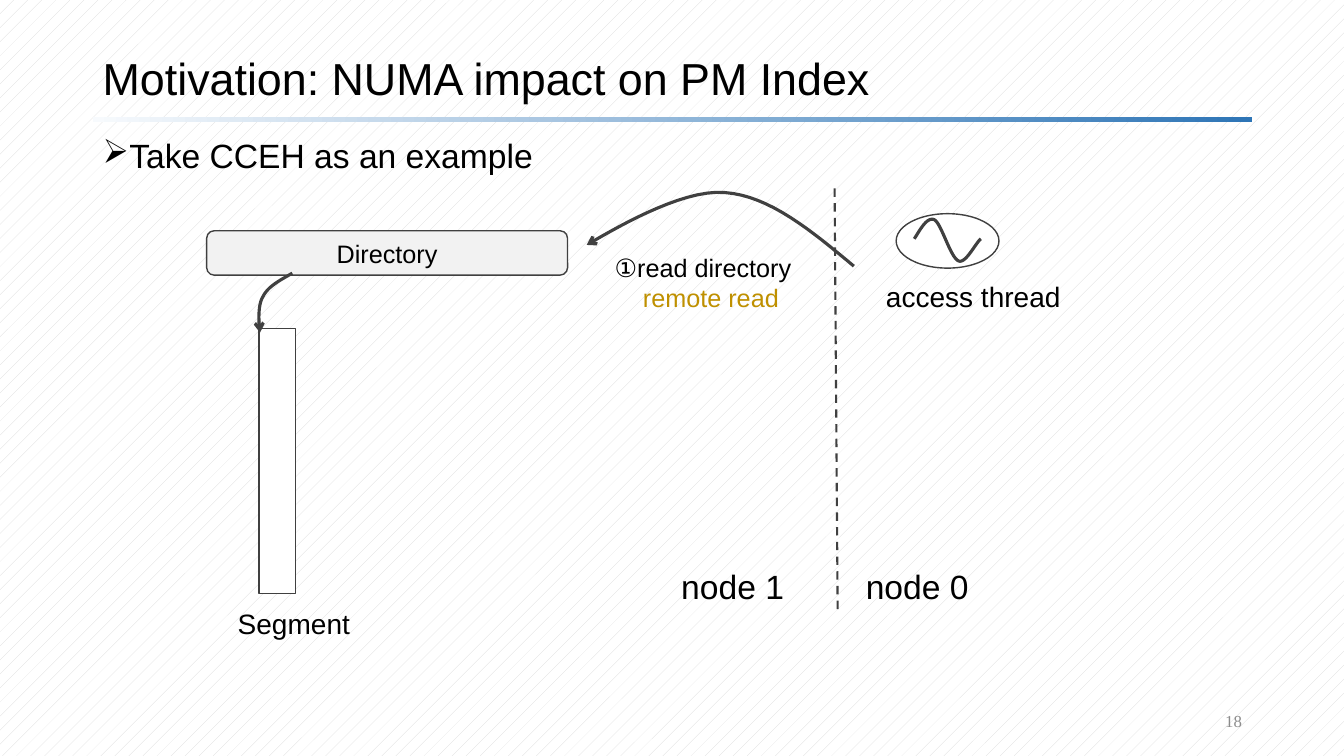
from lxml import etree
from pptx import Presentation
from pptx.dml.color import RGBColor
from pptx.enum.dml import MSO_LINE, MSO_PATTERN
from pptx.enum.shapes import MSO_CONNECTOR, MSO_SHAPE
from pptx.enum.text import MSO_ANCHOR, PP_ALIGN
from pptx.oxml.ns import qn
from pptx.util import Inches, Pt

RECT, ROUND, OVAL = MSO_SHAPE.RECTANGLE, MSO_SHAPE.ROUNDED_RECTANGLE, MSO_SHAPE.OVAL
LEFT, MID, RIGHT = PP_ALIGN.LEFT, PP_ALIGN.CENTER, PP_ALIGN.RIGHT
TOP, CENTER = MSO_ANCHOR.TOP, MSO_ANCHOR.MIDDLE
STRAIGHT, DASH, DOTS = MSO_CONNECTOR.STRAIGHT, MSO_LINE.DASH, MSO_PATTERN.PERCENT_5

BLACK = RGBColor(0x00, 0x00, 0x00)
WHITE = RGBColor(0xFF, 0xFF, 0xFF)
INK = RGBColor(0x40, 0x40, 0x40)
PALE = RGBColor(0xF2, 0xF2, 0xF2)
GRAIN = RGBColor(0xD9, 0xD9, 0xD9)
GRAY = RGBColor(0x8C, 0x8C, 0x8C)
GOLD = RGBColor(0xBF, 0x90, 0x00)
ICE = RGBColor(0xF7, 0xFA, 0xFD)
BLUE = RGBColor(0x2E, 0x75, 0xB6)

WIDE, HIGH = Inches(13.33), Inches(7.5)
STEPS = 16  # points drawn along each curve piece


def place(*shares):
    """Turn percent shares (x, y, x, y ...) of the slide into lengths."""
    return [round((HIGH if i % 2 else WIDE) * s / 100) for i, s in enumerate(shares)]


def write(para, text, size, color=BLACK, align=LEFT, face="Arial"):
    para.text = text
    para.alignment = align
    para.font.size = Pt(size)
    para.font.name = face
    para.font.color.rgb = color


def indent(para, left, first=0):
    props = para._p.get_or_add_pPr()
    props.set("marL", str(Inches(left)))
    props.set("indent", str(Inches(first)))
    return props


def label(slide, box, text, size, wrap=False, anchor=TOP, **style):
    frame = slide.shapes.add_textbox(*place(*box)).text_frame
    frame.word_wrap = wrap
    frame.vertical_anchor = anchor
    write(frame.paragraphs[0], text, size, **style)
    return frame


def block(host, kind, box, fill):
    shape = host.add_shape(kind, *place(*box))
    shape.shadow.inherit = False
    shape.fill.solid()
    shape.fill.fore_color.rgb = fill
    shape.line.color.rgb = INK
    shape.line.width = Pt(1)
    return shape


def curve(host, knots, arrow=False):
    """Draw joined cubic pieces; each shares its end knot with the next."""
    points = []
    for k in range(0, len(knots) - 1, 3):
        a, b, c, d = knots[k:k + 4]
        for step in range(1, STEPS + 1):
            t = step / STEPS
            u = 1 - t
            mix = [u**3 * p + 3 * u * u * t * q + 3 * u * t * t * r + t**3 * s
                   for p, q, r, s in zip(a, b, c, d)]
            points.append(place(*mix))
    pen = host.build_freeform(*place(*knots[0]))
    pen.add_line_segments(points, close=False)
    shape = pen.convert_to_shape()
    shape.shadow.inherit = False
    shape.fill.background()
    shape.line.color.rgb = INK
    shape.line.width = Pt(2.25)
    if arrow:
        line = shape.line._get_or_add_ln()
        etree.SubElement(line, qn("a:tailEnd")).set("type", "arrow")


def divide(slide, ends):
    line = slide.shapes.add_connector(STRAIGHT, *place(*ends))
    line.line.color.rgb = INK
    line.line.width = Pt(1.5)
    line.line.dash_style = DASH
    etree.SubElement(line._element.spPr, qn("a:effectLst"))


def backdrop(slide):
    fill = slide.background.fill
    fill.patterned()
    fill.pattern = DOTS
    fill.fore_color.rgb = GRAIN
    fill.back_color.rgb = WHITE


def rule(slide, box):
    bar = block(slide.shapes, RECT, box, BLUE)
    bar.line.fill.background()
    bar.fill.gradient()
    bar.fill.gradient_angle = 0
    for stop, color in zip(bar.fill.gradient_stops, (ICE, BLUE)):
        stop.color.rgb = color


def header(slide):
    rule(slide, (6.9, 15.47, 86.25, 0.67))
    label(slide, (70.65, 92.67, 22.5, 5.33), "18", 12, True, CENTER,
          color=GRAY, align=RIGHT, face="Times New Roman")
    title = label(slide, (6.9, 5.73, 86.25, 10),
                  "Motivation: NUMA impact on PM Index", 32, True, CENTER)
    body = label(slide, (6.9, 17.73, 86.25, 72.4), "Take CCEH as an example", 24, True)
    for frame in (title, body):
        frame.paragraphs[0].line_spacing = 0.9
    item = body.paragraphs[0]
    item.space_before = Pt(10)
    etree.SubElement(indent(item, 0.25, -0.25), qn("a:buChar")).set("char", "➢")


def main():
    deck = Presentation()
    deck.slide_width, deck.slide_height = WIDE, HIGH
    slide = deck.slides.add_slide(deck.slide_layouts[6])
    shapes = slide.shapes
    backdrop(slide)
    header(slide)

    # Nodes and the border between them
    divide(slide, (62.1, 24.93, 62.33, 81.33))
    for x, name in ((63.68, "node 0"), (49.95, "node 1")):
        label(slide, (x, 74.13, 9.23, 6.67), name, 24)

    # Access thread
    thread = shapes.add_group_shape().shapes
    block(thread, OVAL, (66.68, 28.27, 7.65, 7.2), WHITE)
    curve(thread, [(68.03, 31.6), (68.55, 30.13), (69, 28.67), (69.53, 29.07),
                   (70.05, 29.6), (70.73, 34.13), (71.33, 34.53),
                   (71.85, 34.93), (72.6, 32.13), (72.98, 31.6)])
    label(slide, (65.18, 36.27, 14.63, 5.87), "access thread", 20)

    # Directory and the remote read
    store = block(shapes, ROUND, (15.38, 30.53, 26.85, 5.87), PALE).text_frame
    store.vertical_anchor = CENTER
    write(store.paragraphs[0], "Directory", 18, align=MID)
    curve(shapes, [(63.53, 35.2), (60.38, 30.53), (57.23, 25.87), (53.93, 25.47),
                   (50.63, 24.93), (45.23, 30.8), (43.65, 32.4)], arrow=True)
    read = label(slide, (45, 32.67, 15, 9.47), "①read directory", 18)
    remote = read.add_paragraph()
    write(remote, "remote read", 18, GOLD)
    indent(remote, 0.28)

    # Segment
    block(shapes, RECT, (19.28, 43.47, 2.7, 35.07), WHITE)
    curve(shapes, [(21.75, 36.13), (20.85, 37.07), (19.95, 37.87), (19.58, 39.2),
                   (19.13, 40.4), (19.28, 43.2), (19.35, 44)], arrow=True)
    label(slide, (16.95, 79.6, 9.9, 5.87), "Segment", 20)

    deck.save("out.pptx")


if __name__ == "__main__":
    main()
